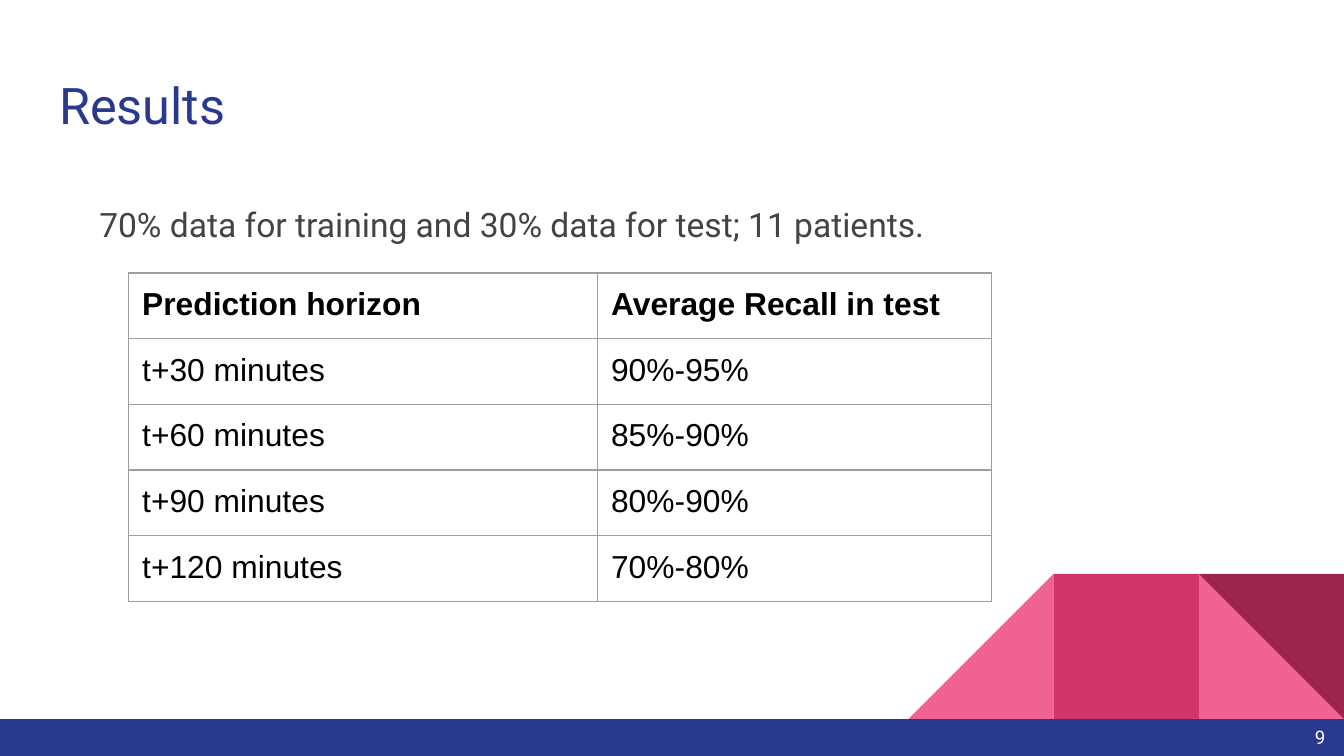
from dataclasses import dataclass

from lxml.etree import SubElement
from pptx import Presentation
from pptx.dml.color import RGBColor
from pptx.enum.shapes import MSO_SHAPE
from pptx.enum.text import MSO_ANCHOR, MSO_AUTO_SIZE, PP_ALIGN
from pptx.oxml.ns import qn
from pptx.util import Pt


@dataclass(frozen=True)
class Theme:
    navy: str = "2A3990"
    pink: str = "F06292"
    rose: str = "D23369"
    wine: str = "9C254D"
    grey: str = "434343"
    border: str = "9E9E9E"
    black: str = "000000"
    white: str = "FFFFFF"
    heading_font: str = "Roboto"
    table_font: str = "Arial"
    title_size: float = 27
    body_size: float = 18
    table_size: float = 17
    number_size: float = 10


THEME = Theme()
INSET = 7.2
TILE = 77.76
FOOTER_TOP = 385.2
ROWS = [
    ("Prediction horizon", "Average Recall in test"),
    ("t+30 minutes", "90%-95%"),
    ("t+60 minutes", "85%-90%"),
    ("t+90 minutes", "80%-90%"),
    ("t+120 minutes", "70%-80%"),
]


def set_all(target, values):
    for name, value in values.items():
        setattr(target, name, value)


def margins(prefix="margin_"):
    return {prefix + side: Pt(INSET) for side in ("left", "top", "right", "bottom")}


def write(frame, text, font, size, color, bold=False, **paragraph):
    para = frame.paragraphs[0]
    set_all(para, paragraph)
    span = para.add_run()
    span.text = text
    set_all(span.font, {"name": font, "size": Pt(size), "bold": bold})
    span.font.color.rgb = RGBColor.from_string(color)


def fill_box(box, bounds, text, size, color, anchor=MSO_ANCHOR.TOP, **paragraph):
    set_all(box, dict(zip(("left", "top", "width", "height"), map(Pt, bounds))))
    set_all(box.text_frame, {
        **margins(), "word_wrap": True,
        "auto_size": MSO_AUTO_SIZE.NONE, "vertical_anchor": anchor,
    })
    write(box.text_frame, text, THEME.heading_font, size, color, **paragraph)


def add_text(page, bounds, *content, **options):
    box = page.shapes.add_textbox(*map(Pt, bounds))
    fill_box(box, bounds, *content, **options)


def add_block(page, kind, bounds, color, rotation=0, mirrored=False):
    block = page.shapes.add_shape(kind, *map(Pt, bounds))
    block.shadow.inherit = False
    block.fill.solid()
    block.fill.fore_color.rgb = RGBColor.from_string(color)
    block.line.fill.background()
    block.rotation = rotation
    if mirrored:
        block._element.spPr.find(qn("a:xfrm")).set("flipH", "1")


def add_decoration(page):
    triangle, square = MSO_SHAPE.RIGHT_TRIANGLE, MSO_SHAPE.RECTANGLE
    tiles = [
        (1, triangle, THEME.pink, {}),
        (3, triangle, THEME.pink, {"mirrored": True}),
        (2, square, THEME.rose, {}),
        (1, triangle, THEME.wine, {"rotation": 180}),
    ]
    for place, kind, color, turn in tiles:
        bounds = (720 - place * TILE, FOOTER_TOP - TILE, TILE, TILE)
        add_block(page, kind, bounds, color, **turn)
    add_block(page, square, (0, FOOTER_TOP, 720, 405 - FOOTER_TOP), THEME.navy)


def add_borders(cell):
    properties = cell._tc.get_or_add_tcPr()
    for index, side in enumerate(("lnL", "lnR", "lnT", "lnB")):
        line = SubElement(properties, qn(f"a:{side}"), w=str(Pt(0.75)))
        fill = SubElement(line, qn("a:solidFill"))
        SubElement(fill, qn("a:srgbClr"), val=THEME.border)
        properties.insert(index, line)


def add_results(page, left, top, widths, row_height):
    frame = page.shapes.add_table(
        len(ROWS), len(widths), Pt(left), Pt(top),
        Pt(sum(widths)), Pt(row_height * len(ROWS)))
    table = frame.table
    set_all(table, {"first_row": False, "horz_banding": False})
    for column, width in zip(table.columns, widths):
        column.width = Pt(width)
    for index, values in enumerate(ROWS):
        table.rows[index].height = Pt(row_height)
        for cell, text in zip(table.rows[index].cells, values):
            set_all(cell, margins())
            cell.fill.background()
            add_borders(cell)
            write(cell.text_frame, text, THEME.table_font, THEME.table_size,
                  THEME.black, bold=index == 0)


def main():
    deck = Presentation()
    set_all(deck, {"slide_width": Pt(720), "slide_height": Pt(405)})
    page = deck.slides.add_slide(deck.slide_layouts[5])
    add_decoration(page)
    fill_box(page.shapes.title, (24.5, 32.4, 671, 47.5), "Results",
             THEME.title_size, THEME.navy, alignment=PP_ALIGN.LEFT)
    add_text(page, (46.1, 98.6, 620.6, 262.8),
             "70% data for training and 30% data for test; 11 patients.",
             THEME.body_size, THEME.grey, line_spacing=1.15, space_after=Pt(12))
    add_results(page, 69, 146.3, (251.2, 211.2), 35.2)
    add_text(page, (673.9, 379.4, 43.2, 31), "9", THEME.number_size, THEME.white,
             anchor=MSO_ANCHOR.MIDDLE, alignment=PP_ALIGN.RIGHT)
    deck.save("out.pptx")


if __name__ == "__main__":
    main()
